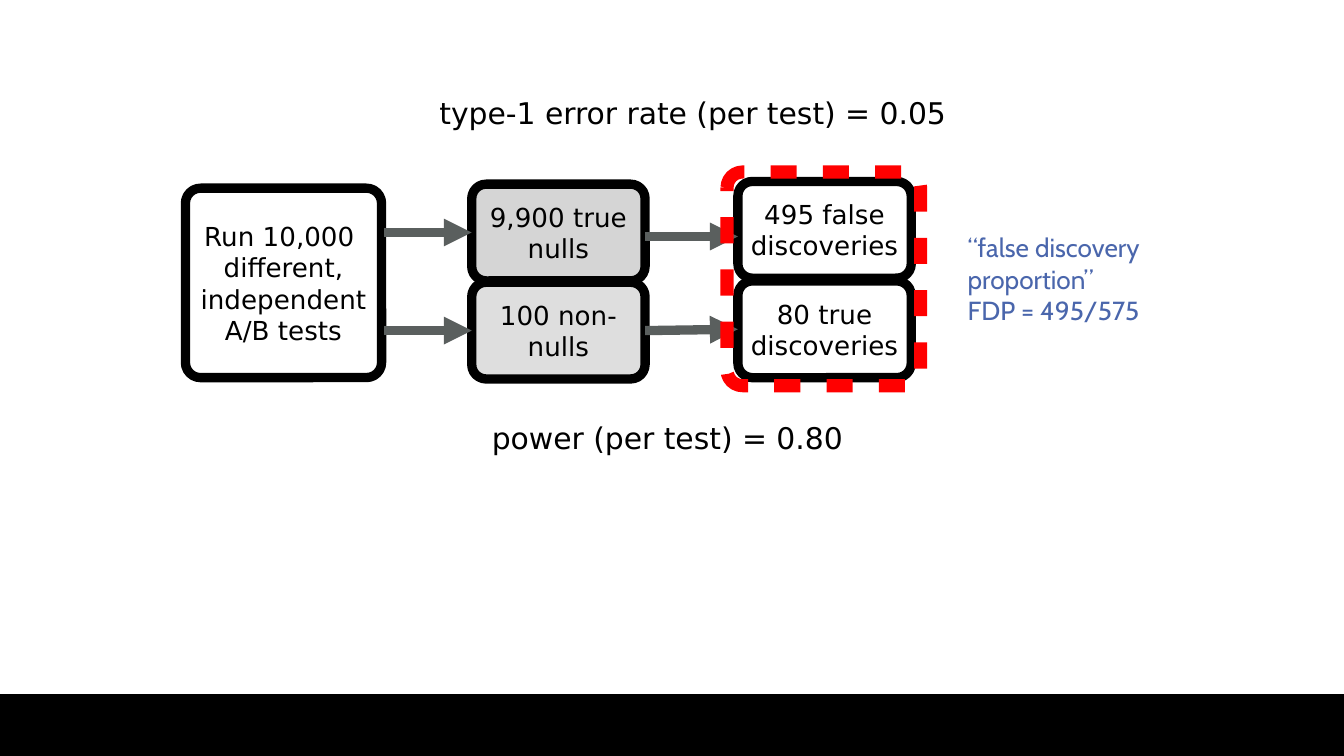
import pptx
import pptx.dml.color
import pptx.enum.shapes
import pptx.enum.text
import pptx.oxml.ns
import pptx.util
from lxml import etree

RGBColor = pptx.dml.color.RGBColor
BLACK = RGBColor(0x00, 0x00, 0x00)
WHITE = RGBColor(0xFF, 0xFF, 0xFF)
NULL_GRAY = RGBColor(0xD5, 0xD5, 0xD5)
NON_NULL_GRAY = RGBColor(0xDE, 0xDE, 0xDE)
ARROW_GRAY = RGBColor(0x5A, 0x5F, 0x5E)
RED = RGBColor(0xFF, 0x00, 0x00)
BLUE = RGBColor(0x4A, 0x66, 0xAC)

PIXELS_PER_INCH = 200
PAGE_WIDTH, PAGE_HEIGHT = 2000, 1125
BODY_FONT, NOTE_FONT = "DejaVu Sans", "Cabin"
PRESET = pptx.enum.shapes.MSO_SHAPE
CENTER = pptx.enum.text.PP_ALIGN.CENTER
LEFT = pptx.enum.text.PP_ALIGN.LEFT


def px(length):
    return pptx.util.Emu(length * 914400 // PIXELS_PER_INCH)


def add_xml(parent, tag, **attributes):
    return etree.SubElement(parent, pptx.oxml.ns.qn(tag), attributes)


def write_text(frame, paragraphs, size, align, font=BODY_FONT, color=BLACK):
    frame.margin_left = frame.margin_right = px(6)
    frame.margin_top = frame.margin_bottom = px(6)
    frame.vertical_anchor = pptx.enum.text.MSO_ANCHOR.MIDDLE
    for index, lines in enumerate(paragraphs):
        para = frame.add_paragraph() if index else frame.paragraphs[0]
        para.alignment = align
        for number, line in enumerate(lines):
            if number:
                para.add_line_break()
            span = para.add_run()
            span.text = line
            span.font.name = font
            span.font.size = pptx.util.Pt(size)
            span.font.color.rgb = color


def add_shape(page, preset, box, fill=None):
    shape = page.shapes.add_shape(preset, *map(px, box))
    shape.shadow.inherit = False
    if fill is None:
        shape.fill.background()
    else:
        shape.fill.solid()
        shape.fill.fore_color.rgb = fill
    shape.line.fill.background()
    return shape


def add_rounded(page, box, corner, fill, line_color, line_width):
    shape = add_shape(page, PRESET.ROUNDED_RECTANGLE, box, fill)
    shape.adjustments[0] = corner
    shape.line.color.rgb = line_color
    shape.line.width = pptx.util.Pt(line_width)
    return shape


def add_step(page, box, corner, fill, paragraphs):
    step = add_rounded(page, box, corner, fill, BLACK, 5)
    step.text_frame.word_wrap = True
    write_text(step.text_frame, paragraphs, 14, CENTER)
    return step


def add_arrow(page, start, end, source=None, target=None):
    arrow = page.shapes.add_connector(
        pptx.enum.shapes.MSO_CONNECTOR.STRAIGHT, *map(px, start + end))
    arrow.line.color.rgb = ARROW_GRAY
    arrow.line.width = pptx.util.Pt(5)
    add_xml(arrow.line._get_or_add_ln(), "a:tailEnd", type="triangle")
    add_xml(arrow._element.spPr, "a:effectLst")
    if source is not None:
        arrow.begin_connect(source, 3)
    if target is not None:
        arrow.end_connect(target, 1)


def add_dashed_frame(page, box):
    frame = add_rounded(page, box, 0.08, None, RED, 7)
    dashes = add_xml(frame.line._get_or_add_ln(), "a:custDash")
    add_xml(dashes, "a:ds", d="200000", sp="200000")


def add_label(page, box, lines, size, font=BODY_FONT, color=BLACK, wrap=True):
    label = page.shapes.add_textbox(*map(px, box))
    frame = label.text_frame
    frame.word_wrap = wrap
    frame.auto_size = pptx.enum.text.MSO_AUTO_SIZE.SHAPE_TO_FIT_TEXT
    write_text(frame, [[line] for line in lines], size, LEFT, font, color)


def add_test_flow(page, box):
    left, top, width, height = box
    step_width, step_height = 258, 144
    nulls_left, found_left = left + 426, left + 822
    nulls_right = nulls_left + step_width

    add_step(page, (left, top + 24, 292, 282), 0.08, WHITE,
             [["Run 10,000 ", "different,", "independent"], ["A/B tests"]])

    nulls = []
    for offset, fill, lines in ((18, NULL_GRAY, ["9,900 true", "nulls"]),
                                (164, NON_NULL_GRAY, ["100 non-nulls"])):
        step = add_step(page, (nulls_left, top + offset, step_width, step_height),
                        0.15, fill, [lines])
        middle = top + offset + step_height // 2
        add_arrow(page, (left + 296, middle), (nulls_left, middle), target=step)
        nulls.append(step)

    found = [
        add_step(page, (found_left, top + offset, step_width, step_height),
                 0.15, WHITE, [[text]])
        for offset, text in ((14, "495 false discoveries"),
                             (162, "80 true discoveries"))]
    add_arrow(page, (nulls_right, top + 96), (found_left, top + 96))
    add_arrow(page, (nulls_right, top + 236), (found_left, top + 234),
              nulls[1], found[1])
    add_dashed_frame(page, (left + width - 288, top, 288, height))


def add_rates(page, box):
    left, top, width, height = box
    label_height = 66
    add_label(page, (left, top, width, label_height),
              ["type-1 error rate (per test) = 0.05"], 16)
    add_label(page, (left + 78, top + height - label_height, 590, label_height),
              ["power (per test) = 0.80"], 16)


def add_proportion_note(page, box):
    add_label(page, box, ["“false discovery", "proportion”", "FDP = 495/575"],
              14, NOTE_FONT, BLUE, wrap=False)


def build_deck():
    deck = pptx.Presentation()
    deck.slide_width, deck.slide_height = px(PAGE_WIDTH), px(PAGE_HEIGHT)
    page = deck.slides.add_slide(deck.slide_layouts[6])
    footer_top = 1033
    add_shape(page, PRESET.RECTANGLE,
              (0, footer_top, PAGE_WIDTH, PAGE_HEIGHT - footer_top), BLACK)
    add_test_flow(page, (276, 256, 1094, 318))
    add_rates(page, (648, 134, 848, 550))
    add_proportion_note(page, (1434, 338, 280, 154))
    deck.save("out.pptx")


if __name__ == "__main__":
    build_deck()
